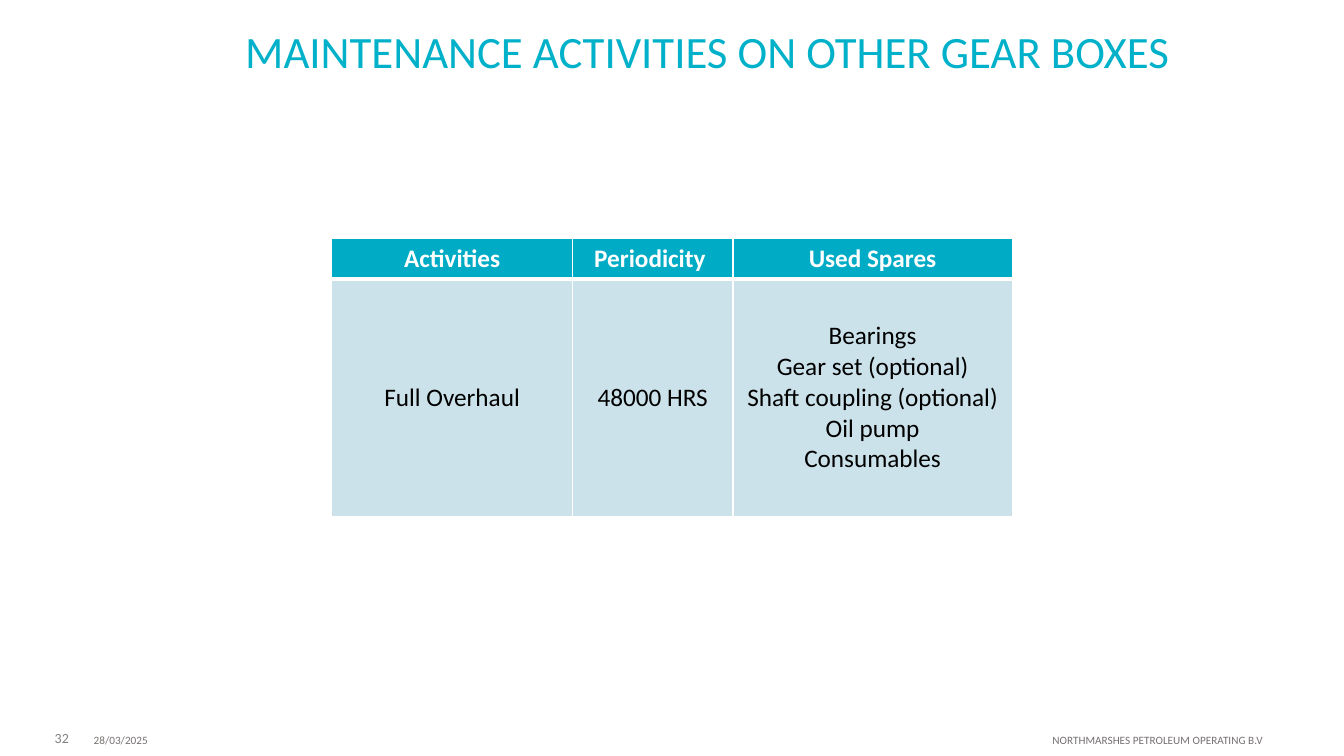
import lxml.etree
import pptx
import pptx.dml.color
import pptx.enum.text
import pptx.oxml.ns
import pptx.util

WIDTH = pptx.util.Inches(13.33)
HEIGHT = pptx.util.Inches(7.5)
COLORS = {"title": "01B1C9", "header": "00ABC5", "body": "CCE2EA", "white": "FFFFFF",
          "black": "000000", "number": "808080", "footer": "767171"}
ALIGN = pptx.enum.text.PP_ALIGN
MIDDLE = pptx.enum.text.MSO_ANCHOR.MIDDLE

COLUMNS = (17.93, 11.93, 20.78)
ROWS = (5.2, 31.33)
ACTIVITIES = (
    ("Activities", "Periodicity ", "Used Spares"),
    ("Full Overhaul", "48000 HRS",
     "Bearings\nGear set (optional)\nShaft coupling (optional)\nOil pump\nConsumables"),
)


def across(percent):
    return round(WIDTH * percent / 100)


def down(percent):
    return round(HEIGHT * percent / 100)


def rgb(name):
    return pptx.dml.color.RGBColor.from_string(COLORS[name])


def add_child(parent, tag, **attributes):
    child = lxml.etree.SubElement(parent, pptx.oxml.ns.qn(tag))
    for key, value in attributes.items():
        child.set(key, str(value))
    return child


def write(frame, text, size, color, align, bold=False, tab=None):
    """Fill a text frame; tab is the place of a right tab stop in percent of the width."""
    frame.text = text
    for para in frame.paragraphs:
        para.alignment = align
        if tab:
            stops = add_child(para._p.get_or_add_pPr(), "a:tabLst")
            add_child(stops, "a:tab", pos=across(tab), algn="r")
        para.font.name = "Calibri"
        para.font.size = pptx.util.Pt(size)
        para.font.bold = bold
        para.font.color.rgb = rgb(color)


def add_text(page, area, text, size, color, align, anchor=None, tab=None):
    """Add a text box; area is left, top, width and height in percent of the slide."""
    left, top, width, height = area
    box = page.shapes.add_textbox(across(left), down(top), across(width), down(height))
    box.text_frame.word_wrap = True
    box.text_frame.vertical_anchor = anchor
    write(box.text_frame, text, size, color, align, tab=tab)


def add_borders(cell, **points):
    """Draw white borders; the keys L, R, T and B give the widths."""
    properties = cell._tc.get_or_add_tcPr()
    for side, width in points.items():
        line = add_child(properties, f"a:ln{side}", w=pptx.util.Pt(width))
        add_child(add_child(line, "a:solidFill"), "a:srgbClr", val=COLORS["white"])


def add_activity_table(page):
    table = page.shapes.add_table(
        len(ROWS), len(COLUMNS), across(24.68), down(31.6),
        across(sum(COLUMNS)), down(sum(ROWS))).table
    for column, share in zip(table.columns, COLUMNS):
        column.width = across(share)
    for index, (row, share, texts) in enumerate(zip(table.rows, ROWS, ACTIVITIES)):
        row.height = down(share)
        header = index == 0
        for cell, text in zip(row.cells, texts):
            cell.vertical_anchor = MIDDLE
            add_borders(cell, L=1, R=1, T=1 if header else 3, B=3 if header else 1)
            cell.fill.solid()
            cell.fill.fore_color.rgb = rgb("header" if header else "body")
            write(cell.text_frame, text, 18, "white" if header else "black",
                  ALIGN.CENTER, bold=header)


def main():
    deck = pptx.Presentation()
    deck.slide_width, deck.slide_height = WIDTH, HEIGHT
    page = deck.slides.add_slide(deck.slide_layouts[6])
    add_text(page, (0.83, 95.2, 5.03, 4.8), "32", 10, "number", ALIGN.RIGHT, MIDDLE)
    add_text(page, (5.33, 2.53, 94.67, 12.13),
             "MAINTENANCE ACTIVITIES ON OTHER GEAR BOXES", 32, "title", ALIGN.CENTER)
    add_activity_table(page)
    add_text(page, (6.23, 96.4, 93.77, 3.6),
             "28/03/2025\tNORTHMARSHES PETROLEUM OPERATING B.V", 8, "footer",
             ALIGN.LEFT, tab=87.02)
    deck.save("out.pptx")


if __name__ == "__main__":
    main()
